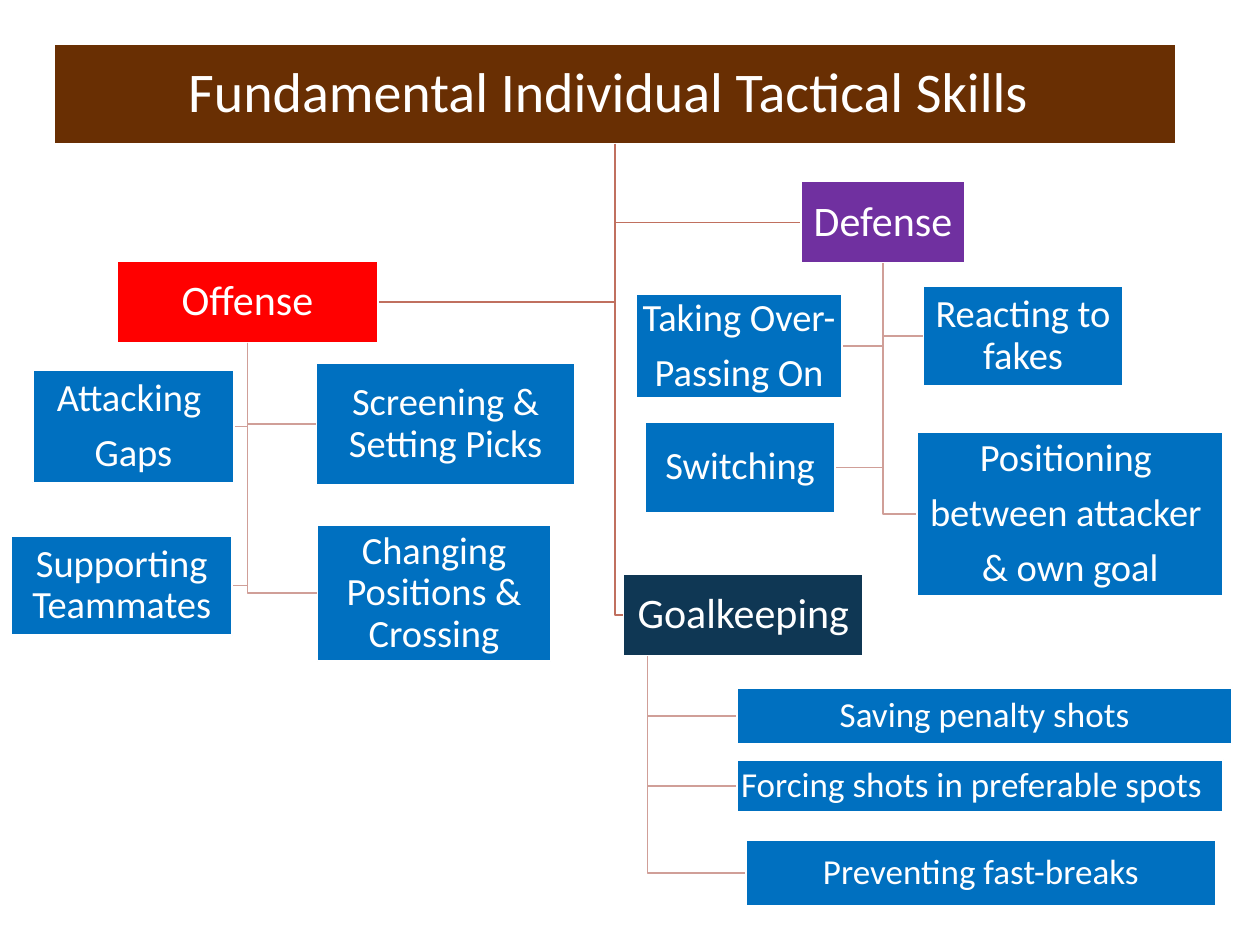
"""Build a slide charting the fundamental individual tactical skills as a hierarchy."""
from pptx import Presentation
from pptx.dml.color import RGBColor
from pptx.enum.shapes import MSO_SHAPE
from pptx.enum.text import MSO_ANCHOR, MSO_AUTO_SIZE, PP_ALIGN
from pptx.util import Cm, Pt

WHITE = RGBColor(0xFF, 0xFF, 0xFF)
BROWN = RGBColor(0x69, 0x2F, 0x03)
PURPLE = RGBColor(0x70, 0x30, 0xA0)
RED = RGBColor(0xFF, 0x00, 0x00)
NAVY = RGBColor(0x0F, 0x37, 0x54)
BLUE = RGBColor(0x00, 0x70, 0xC0)
MAIN_LINK = RGBColor(0xC0, 0x70, 0x5F)
SKILL_LINK = RGBColor(0xD0, 0x9F, 0x98)

BRANCHES = [
    ("Defense", (16.15, 3.66, 3.3, 1.65), PURPLE, 0.5, 22, [
        ("Reacting to fakes", (18.62, 5.77, 4.01, 2.01)),
        ("Taking Over-\nPassing On", (12.83, 5.94, 4.14, 2.08)),
        ("Positioning \nbetween attacker \n& own goal", (18.49, 8.71, 6.17, 3.3)),
        ("Switching", (13, 8.51, 3.84, 1.83)),
    ]),
    ("Offense", (2.36, 5.26, 5.26, 1.65), RED, 0.5, 22, [
        ("Screening & Setting Picks", (6.38, 7.32, 5.21, 2.46)),
        ("Attacking \nGaps", (0.66, 7.47, 4.06, 2.26)),
        ("Changing Positions & Crossing", (6.4, 10.59, 4.7, 2.74)),
        ("Supporting Teammates", (0.23, 10.8, 4.45, 2.01)),
    ]),
    ("Goalkeeping", (12.57, 11.58, 4.83, 1.65), NAVY, 0.1, 20, [
        ("Saving penalty shots", (14.86, 13.87, 9.98, 1.12)),
        ("Forcing shots in preferable spots", (14.86, 15.32, 9.8, 1.04)),
        ("Preventing fast-breaks", (15.04, 16.94, 9.47, 1.32)),
    ]),
]


def fill_box(box, text, *, size, fill, inset=0.05, right_inset=None):
    box.fill.solid()
    box.fill.fore_color.rgb = fill
    box.line.color.rgb = WHITE
    box.line.width = Pt(1)
    frame = box.text_frame
    frame.word_wrap = True
    frame.auto_size = MSO_AUTO_SIZE.NONE
    frame.vertical_anchor = MSO_ANCHOR.MIDDLE
    frame.margin_left = frame.margin_top = frame.margin_bottom = Cm(inset)
    frame.margin_right = Cm(right_inset or inset)
    frame.text = text
    for paragraph in frame.paragraphs:
        paragraph.alignment = PP_ALIGN.CENTER
        paragraph.line_spacing = 0.9
        paragraph.space_before = Pt(0)
        paragraph.space_after = Pt(size * 0.35)
        paragraph.font.name = "Calibri"
        paragraph.font.size = Pt(size)
        paragraph.font.color.rgb = WHITE


def add_node(parent, child, *, share, link_color):
    left, top, width, height = parent
    trunk = left + width * share
    child_left, child_top, child_width, child_height = child
    side = child_left if child_left > trunk else child_left + child_width
    middle = child_top + child_height / 2
    builder = slide.shapes.build_freeform(Cm(trunk), Cm(top + height))
    builder.add_line_segments(
        [(Cm(trunk), Cm(middle)), (Cm(side), Cm(middle))], close=False)
    link = builder.convert_to_shape()
    link.shadow.inherit = False
    link.fill.background()
    link.line.color.rgb = link_color
    link.line.width = Pt(1)
    node = slide.shapes.add_shape(MSO_SHAPE.RECTANGLE, *map(Cm, child))
    node.shadow.inherit = False
    return node


presentation = Presentation()
presentation.slide_width = Cm(25.4)
presentation.slide_height = Cm(19.05)
slide = presentation.slides.add_slide(presentation.slide_layouts[5])

heading_place = (1.09, 0.89, 22.61, 2.01)
heading = slide.shapes.title
heading.left, heading.top, heading.width, heading.height = map(Cm, heading_place)
fill_box(heading, "Fundamental Individual Tactical Skills ", size=32, fill=BROWN)

for phase, phase_place, color, share, skill_size, skills in BRANCHES:
    phase_box = add_node(heading_place, phase_place, share=0.5, link_color=MAIN_LINK)
    fill_box(phase_box, phase, size=24, fill=color)
    for skill, skill_place in skills:
        skill_box = add_node(phase_place, skill_place, share=share, link_color=SKILL_LINK)
        fill_box(skill_box, skill, size=skill_size, fill=BLUE,
                 inset=0.03 if skill_size == 20 else 0.05,
                 right_inset=0.38 if skill.startswith("Forcing") else None)

presentation.save("out.pptx")
